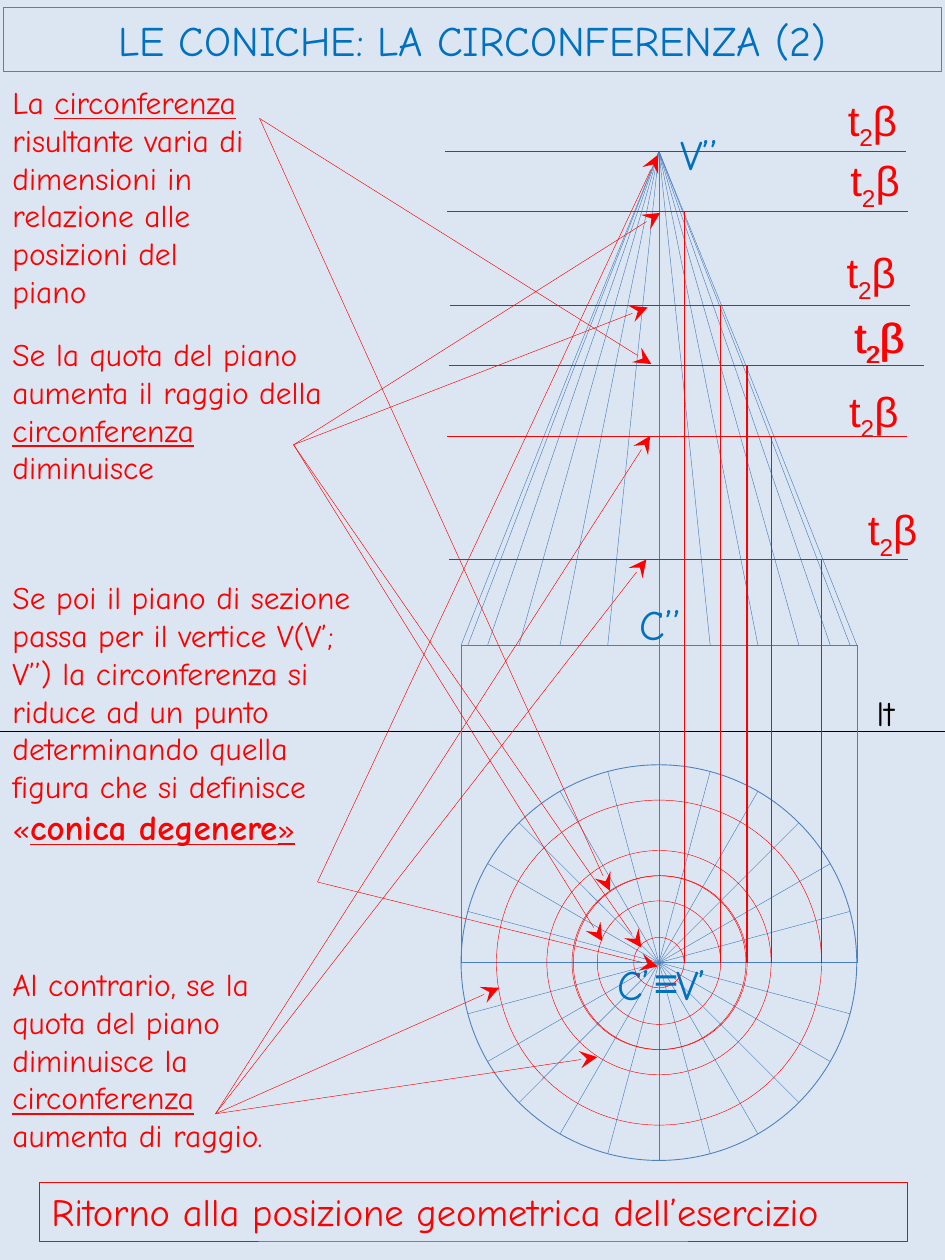
from dataclasses import dataclass
from math import cos, radians, sin

from lxml import etree
from pptx import Presentation
from pptx.dml.color import RGBColor
from pptx.enum.shapes import MSO_CONNECTOR, MSO_SHAPE
from pptx.enum.text import MSO_ANCHOR, MSO_AUTO_SIZE, PP_ALIGN
from pptx.oxml.ns import qn
from pptx.util import Inches, Pt

STRAIGHT = MSO_CONNECTOR.STRAIGHT
ELLIPSE, RECTANGLE = MSO_SHAPE.OVAL, MSO_SHAPE.RECTANGLE
MIDDLE, CENTER, LEFT = MSO_ANCHOR.MIDDLE, PP_ALIGN.CENTER, PP_ALIGN.LEFT
GROW = MSO_AUTO_SIZE.SHAPE_TO_FIT_TEXT

Point = tuple[float, float]
Box = tuple[float, float, float, float]


@dataclass(frozen=True)
class Theme:
    background: str = "DCE6F2"
    outline: str = "4F81BD"
    construction: str = "4B7EBC"
    section: str = "FF0000"
    label: str = "0070C0"
    ground: str = "000000"
    hand: str = "Comic Neue"
    plain: str = "Arial"
    body: int = 18
    emphasis: int = 20
    button: int = 22
    heading: int = 24
    hairline: float = 0.25
    thin: float = 0.5
    frame: float = 0.75


@dataclass(frozen=True)
class Run:
    text: str
    underline: bool = False
    bold: bool = False
    subscript: bool = False
    size: int | None = None


@dataclass(frozen=True)
class TextBlock:
    box: Box
    runs: tuple[Run, ...]
    color: str
    size: int
    font: str


@dataclass(frozen=True)
class Section:
    """Cutting plane at a height, with the circle it makes in plan."""
    y: float
    left: float
    right: float
    radius: float
    label: Point
    shift: float = 0


@dataclass(frozen=True)
class Callout:
    start: Point
    targets: tuple[Point, ...]


THEME = Theme()
CX, APEX_Y, BASE_Y, PLAN_Y, RADIUS = 5.23, 1.2, 5.12, 7.64, 1.57
SPLIT_Y, SPLIT_RADIUS = 2.9, 0.69
APEX, PLAN_CENTER = (CX, APEX_Y), (CX, PLAN_Y)
STEP = 15

SECTIONS = (
    Section(3.46, 3.55, 7.2, 0.89, (6.64, 3.01)),
    Section(2.9, 3.56, 7.22, 0.69, (6.68, 2.42)),
    Section(4.44, 3.56, 7.21, 1.29, (6.79, 3.95)),
    Section(2.42, 3.57, 7.22, 0.49, (6.62, 1.91)),
    Section(1.68, 3.55, 7.21, 0.2, (6.65, 1.18)),
    Section(1.2, 3.53, 7.19, 0, (6.63, 0.7)),
    Section(2.9, 3.59, 7.33, 0.69, (6.69, 2.42), shift=0.01),
)

CALLOUTS = (
    Callout((2.06, 0.94), ((5.17, 2.89), (4.84, 7.07))),
    Callout((2.33, 3.53), ((5.14, 2.44), (4.78, 7.47), (5.24, 1.69), (5.09, 7.52))),
    Callout((2.52, 7), ((5.22, 1.23), (5.22, 7.67))),
    Callout((1.71, 8.84), ((5.16, 3.46), (4.74, 8.39), (5.13, 4.44), (3.96, 7.84))),
)


def note(box: Box, *runs: Run) -> TextBlock:
    return TextBlock(box, runs, THEME.section, THEME.body, THEME.hand)


def point_label(box: Box, text: str, font: str = THEME.hand) -> TextBlock:
    return TextBlock(box, (Run(text),), THEME.label, THEME.heading, font)


CIRCLE_WORD = Run("circonferenza", underline=True)
TEXTS = (
    TextBlock((6.86, 5.44, 0.47, 0.44), (Run("lt"),), THEME.ground, THEME.emphasis, THEME.hand),
    point_label((5.3, 0.97, 0.64, 0.51), "V’’"),
    point_label((4.8, 7.56, 0.47, 0.51), "C’"),
    point_label((5.27, 7.56, 0.51, 0.51), "V’"),
    point_label((5.09, 7.54, 0.32, 0.32), "≡", THEME.plain),
    point_label((4.98, 4.7, 0.64, 0.5), "C’’"),
    note((0, 0.61, 2.16, 1.61), Run("La "), CIRCLE_WORD,
         Run(" risultante varia di dimensioni in relazione alle posizioni del piano")),
    note((0, 7.61, 2.44, 1.62), Run("Al contrario, se la quota del piano diminuisce la "),
         CIRCLE_WORD, Run(" aumenta di raggio.")),
    note((0, 2.61, 2.76, 1.31), Run("Se la quota del piano aumenta il raggio della "),
         CIRCLE_WORD, Run(" diminuisce")),
    note((0, 4.54, 2.99, 2.56),
         Run("Se poi il piano di sezione passa per il vertice V(V’; V’’) la circonferenza si "
             "riduce ad un punto determinando quella figura che si definisce «"),
         Run("conica degenere", underline=True, bold=True, size=THEME.emphasis),
         Run("»", underline=True)),
)


def rgb(color: str) -> RGBColor:
    return RGBColor.from_string(color)


def draw_line(slide, start: Point, end: Point, color: str,
              width: float = THEME.hairline, arrow: bool = False) -> None:
    connector = slide.shapes.add_connector(STRAIGHT, *map(Inches, (*start, *end)))
    connector.line.color.rgb = rgb(color)
    connector.line.width = Pt(width)
    properties = connector.element.spPr
    if arrow:
        etree.SubElement(properties.find(qn("a:ln")), qn("a:tailEnd"),
                         type="stealth", w="lg", len="lg")
    etree.SubElement(properties, qn("a:effectLst"))


def draw_outline(slide, kind, box: Box, color: str, width: float = THEME.hairline):
    shape = slide.shapes.add_shape(kind, *map(Inches, box))
    shape.shadow.inherit = False
    shape.fill.background()
    shape.line.color.rgb = rgb(color)
    shape.line.width = Pt(width)
    return shape


def draw_circle(slide, center_x: float, radius: float, color: str,
                width: float = THEME.hairline) -> None:
    box = (center_x - radius, PLAN_Y - radius, 2 * radius, 2 * radius)
    draw_outline(slide, ELLIPSE, box, color, width)


def write_runs(paragraph, runs: tuple[Run, ...], color: str, size: int, font: str) -> None:
    for part in runs:
        run = paragraph.add_run()
        run.text = part.text
        run.font.name = font
        run.font.size = Pt(part.size or size)
        run.font.color.rgb = rgb(color)
        run.font.bold = part.bold
        run.font.underline = part.underline
        if part.subscript:
            run.font._element.set("baseline", "-25000")


def draw_text(slide, block: TextBlock) -> None:
    frame = slide.shapes.add_textbox(*map(Inches, block.box)).text_frame
    frame.word_wrap = True
    frame.auto_size = GROW
    write_runs(frame.paragraphs[0], block.runs, block.color, block.size, block.font)


def draw_title(slide) -> None:
    title = slide.shapes.title
    title.left, title.top, title.width, title.height = map(Inches, (0.03, 0.06, 7.44, 0.51))
    title.line.color.rgb = rgb(THEME.outline)
    title.line.width = Pt(THEME.frame)
    title.text_frame.vertical_anchor = MIDDLE
    paragraph = title.text_frame.paragraphs[0]
    paragraph.alignment = CENTER
    write_runs(paragraph, (Run("LE CONICHE: LA CIRCONFERENZA (2)"),),
               THEME.label, THEME.heading, THEME.hand)


def draw_cone(slide) -> None:
    """Front view, plan and the projection lines that join them."""
    color = THEME.construction
    draw_circle(slide, CX, RADIUS, THEME.outline, THEME.thin)
    for x in (CX - RADIUS, CX + RADIUS):
        draw_line(slide, (x, PLAN_Y), (x, BASE_Y), color)
    draw_line(slide, (CX - RADIUS, BASE_Y), (CX + RADIUS, BASE_Y), color, THEME.thin)
    draw_line(slide, (CX, BASE_Y), (CX, PLAN_Y - RADIUS), color)
    for angle in range(0, 360, STEP):
        dx, dy = cos(radians(angle)), sin(radians(angle))
        middle = (CX + SPLIT_RADIUS * dx, PLAN_Y + SPLIT_RADIUS * dy)
        draw_line(slide, PLAN_CENTER, middle, color)
        draw_line(slide, middle, (CX + RADIUS * dx, PLAN_Y + RADIUS * dy), color)
        if angle <= 180:
            middle = (CX + SPLIT_RADIUS * dx, SPLIT_Y)
            draw_line(slide, APEX, middle, color)
            draw_line(slide, middle, (CX + RADIUS * dx, BASE_Y), color)


def draw_section(slide, section: Section) -> None:
    draw_line(slide, (section.left, section.y), (section.right, section.y), THEME.section)
    if section.radius:
        center_x = CX + section.shift
        draw_circle(slide, center_x, section.radius, THEME.section)
        x = center_x + section.radius
        draw_line(slide, (x, section.y), (x, PLAN_Y), THEME.section)
    draw_text(slide, TextBlock((*section.label, 0.71, 0.55),
                               (Run("t"), Run("2", subscript=True), Run("β")),
                               THEME.section, THEME.heading, THEME.plain))


def draw_return_button(slide) -> None:
    button = draw_outline(slide, RECTANGLE, (0.31, 9.38, 6.89, 0.47), THEME.section)
    frame = button.text_frame
    frame.word_wrap = True
    frame.vertical_anchor = MIDDLE
    paragraph = frame.paragraphs[0]
    paragraph.alignment = LEFT
    write_runs(paragraph, (Run("Ritorno alla posizione geometrica dell’esercizio"),),
               THEME.section, THEME.button, THEME.hand)


def main() -> None:
    deck = Presentation()
    deck.slide_width, deck.slide_height = Inches(7.5), Inches(10)
    slide = deck.slides.add_slide(deck.slide_layouts[5])
    slide.background.fill.solid()
    slide.background.fill.fore_color.rgb = rgb(THEME.background)
    draw_line(slide, (0, 5.8), (7.5, 5.8), THEME.ground)
    draw_title(slide)
    draw_cone(slide)
    for block in TEXTS:
        draw_text(slide, block)
    for section in SECTIONS:
        draw_section(slide, section)
    for callout in CALLOUTS:
        for target in callout.targets:
            draw_line(slide, callout.start, target, THEME.section, arrow=True)
    draw_return_button(slide)
    deck.save("out.pptx")


if __name__ == "__main__":
    main()
